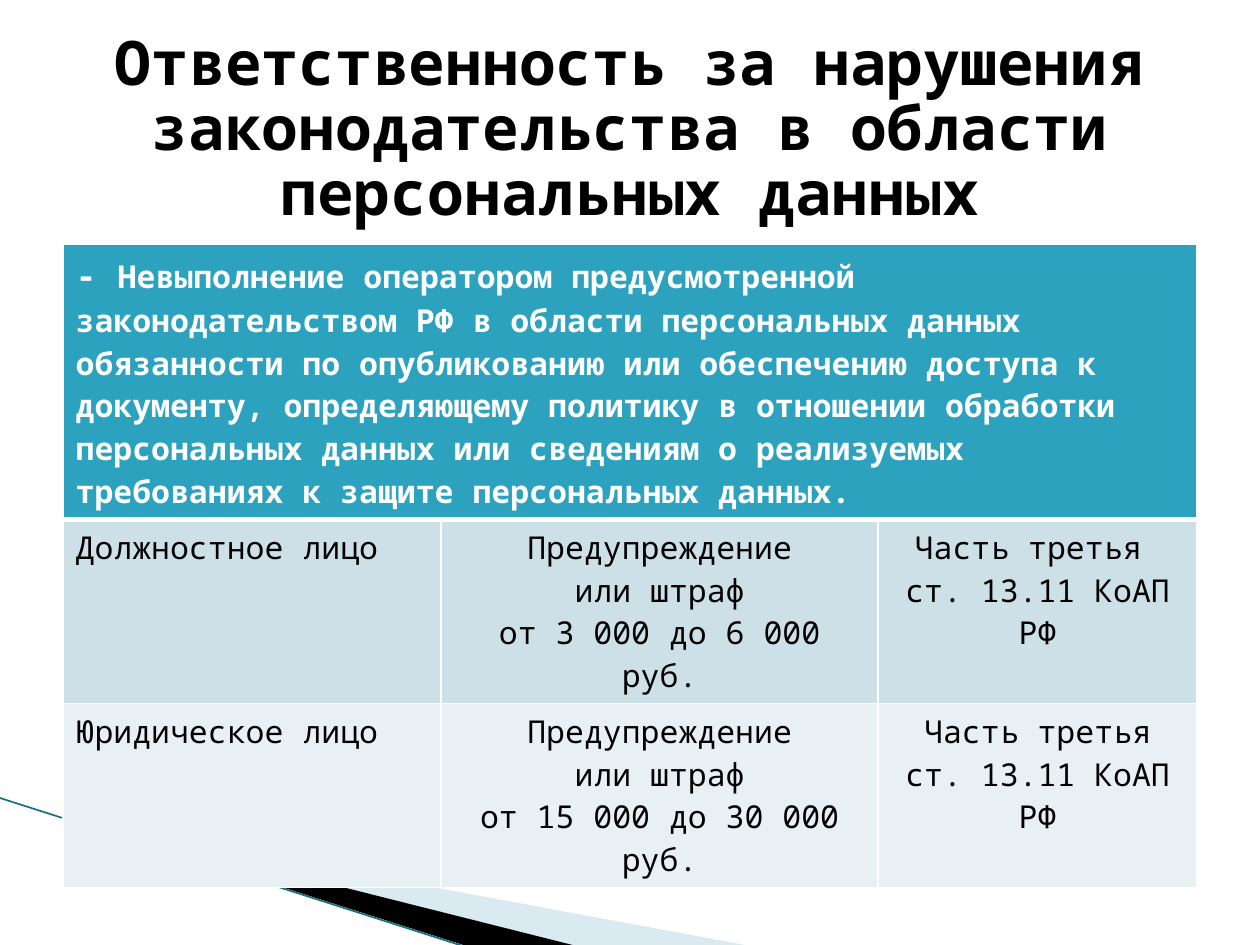
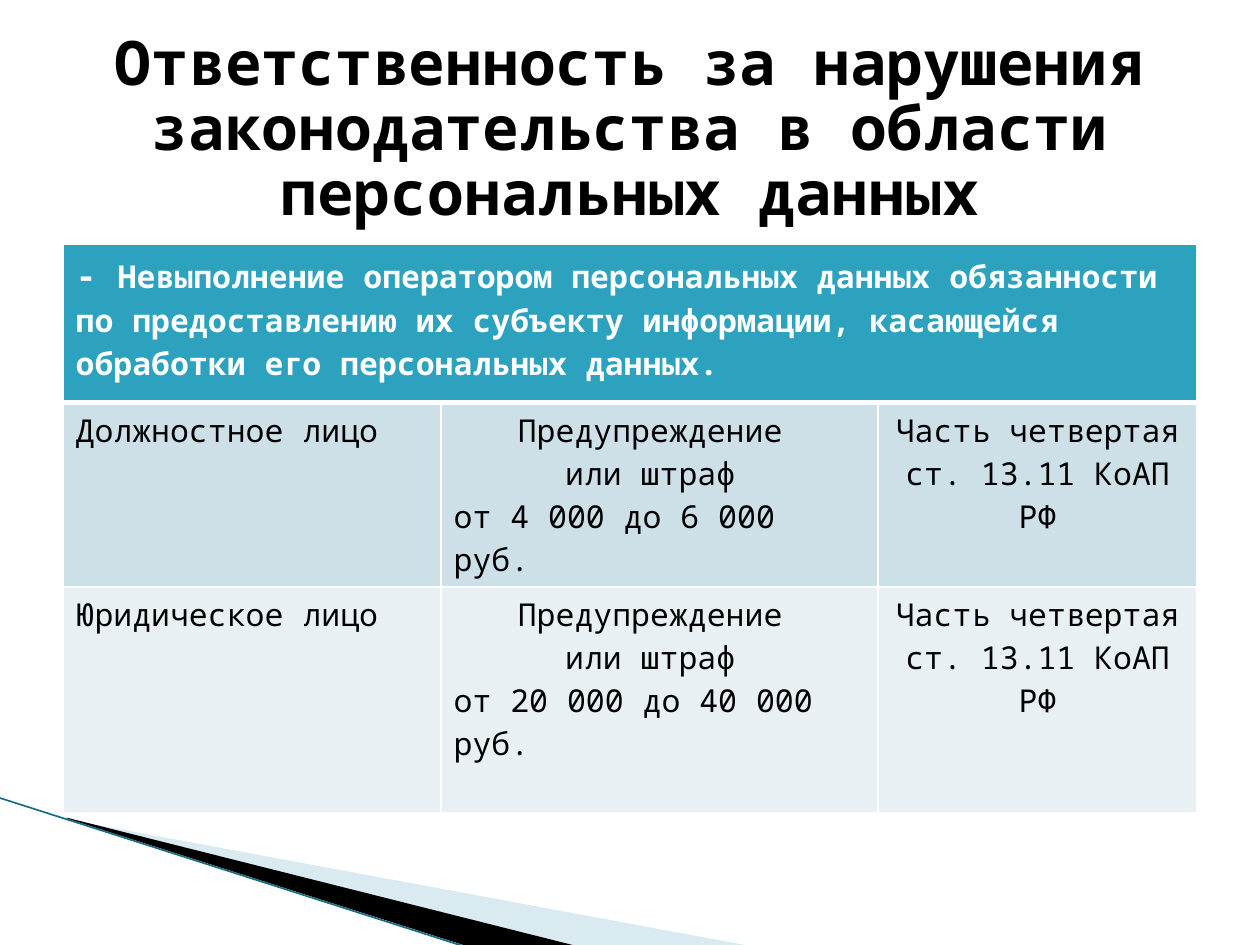
import dataclasses
import typing

import lxml.etree
import pptx
import pptx.dml.color
import pptx.enum.shapes
import pptx.enum.text
import pptx.oxml.ns
import pptx.util

Pt = pptx.util.Pt
RGBColor = pptx.dml.color.RGBColor
ALIGN = pptx.enum.text.PP_ALIGN
qn = pptx.oxml.ns.qn

FONT = "Noto Sans Mono"
BLACK = RGBColor(0x00, 0x00, 0x00)
WHITE = RGBColor(0xFF, 0xFF, 0xFF)
HEADER_BLUE = RGBColor(0x2D, 0xA2, 0xBF)
ROW_FILLS = (RGBColor(0xCD, 0xE0, 0xE8), RGBColor(0xE8, 0xF0, 0xF4))
PALE_BLUE = RGBColor(0xA0, 0xCB, 0xDC)
EDGE_TEAL = RGBColor(0x1A, 0x6E, 0x82)

TITLE = "Ответственность за нарушения законодательства в области персональных данных"
PERSONS = ("Должностное лицо", "Юридическое лицо")
ARTICLE = "ст. 13.11 КоАП РФ"
LEFT, WIDTH = 36, 648
TABLE_TOP = 139.7
COLUMN_WIDTHS = (216, 249.84, 182.16)
THIN, THICK = 1, 3


@dataclasses.dataclass(frozen=True)
class Wedge:
    points: tuple[tuple[float, float], ...]
    color: RGBColor
    opacity: int


@dataclasses.dataclass(frozen=True)
class Violation:
    description: str
    warning: tuple[str, str]
    fines: tuple[str, str]
    clauses: tuple[str, str]
    fine_align: typing.Any
    row_heights: tuple[float, float, float]


WEDGES = (
    Wedge(((39.6, 468.5), (428.4, 540.5), (328.3, 540.5), (39.6, 468)), PALE_BLUE, 40),
    Wedge(((38.2, 467.3), (329, 540.5), (267.8, 541), (38.9, 468)), BLACK, 100),
)

VIOLATIONS = (
    Violation(
        "Невыполнение оператором предусмотренной законодательством РФ в области "
        "персональных данных обязанности по опубликованию или обеспечению доступа к "
        "документу, определяющему политику в отношении обработки персональных данных "
        "или сведениям о реализуемых требованиях к защите персональных данных.",
        ("Предупреждение", " или штраф "),
        ("от 3 000 до 6 000 руб.", "от 15 000 до 30 000 руб."),
        ("Часть третья ", "Часть третья"),
        ALIGN.CENTER,
        (156, 105, 105),
    ),
    Violation(
        "Невыполнение оператором персональных данных обязанности по предоставлению "
        "их субъекту информации, касающейся обработки его персональных данных.",
        ("Предупреждение ", "или штраф "),
        ("от 4 000 до 6 000 руб.", "от 20 000 до 40 000 руб."),
        ("Часть четвертая", "Часть четвертая"),
        ALIGN.LEFT,
        (90.5, 105, 129),
    ),
)


def style_font(font, size: float, color: RGBColor, bold: bool) -> None:
    font.name = FONT
    font.size = Pt(size)
    font.bold = bold
    font.color.rgb = color


def add_title(slide) -> None:
    title = slide.shapes.title
    title.left, title.top, title.width, title.height = Pt(LEFT), Pt(21.6), Pt(WIDTH), Pt(106.56)
    frame = title.text_frame
    frame.text = TITLE
    frame.word_wrap = True
    frame.auto_size = pptx.enum.text.MSO_AUTO_SIZE.NONE
    frame.vertical_anchor = pptx.enum.text.MSO_ANCHOR.MIDDLE
    paragraph = frame.paragraphs[0]
    paragraph.alignment = ALIGN.CENTER
    paragraph.line_spacing = 0.88
    style_font(paragraph.runs[0].font, 35, BLACK, True)


def add_wedge(slide, wedge: Wedge) -> None:
    corners = [(Pt(x), Pt(y)) for x, y in wedge.points]
    builder = slide.shapes.build_freeform(*corners[0], scale=1.0)
    builder.add_line_segments(corners[1:], close=True)
    shape = builder.convert_to_shape()
    shape.shadow.inherit = False
    shape.line.fill.background()
    shape.fill.solid()
    shape.fill.fore_color.rgb = wedge.color
    if wedge.opacity < 100:
        color = shape._element.spPr.find(qn("a:solidFill"))[0]
        lxml.etree.SubElement(color, qn("a:alpha"), val=str(wedge.opacity * 1000))


def add_corner_decor(slide) -> None:
    for wedge in WEDGES:
        add_wedge(slide, wedge)
    edge = slide.shapes.add_connector(
        pptx.enum.shapes.MSO_CONNECTOR.STRAIGHT, Pt(-0.7), Pt(455.8), Pt(267.1), Pt(541.4)
    )
    edge.line.color.rgb = EDGE_TEAL
    edge.line.width = Pt(0.95)
    lxml.etree.SubElement(edge._element.spPr, qn("a:effectLst"))


def style_cell(cell, fill: RGBColor, top: float, bottom: float) -> None:
    cell.fill.solid()
    cell.fill.fore_color.rgb = fill
    properties = cell._tc.get_or_add_tcPr()
    borders = {"a:lnL": THIN, "a:lnR": THIN, "a:lnT": top, "a:lnB": bottom}
    for position, (tag, width) in enumerate(borders.items()):
        border = lxml.etree.Element(qn(tag), w=str(Pt(width)))
        paint = lxml.etree.SubElement(border, qn("a:solidFill"))
        lxml.etree.SubElement(paint, qn("a:srgbClr"), val=str(WHITE))
        properties.insert(position, border)


def write_cell(cell, lines: typing.Sequence[str], aligns: typing.Sequence) -> None:
    cell.text_frame.text = "\n".join(lines)
    for paragraph, align in zip(cell.text_frame.paragraphs, aligns):
        paragraph.alignment = align
        style_font(paragraph.runs[0].font, 18, BLACK, False)


def write_header(cell, description: str) -> None:
    paragraph = cell.text_frame.paragraphs[0]
    for text, size in (("- ", 20), (description, 18)):
        run = paragraph.add_run()
        run.text = text
        style_font(run.font, size, WHITE, True)


def add_penalty_table(slide, violation: Violation) -> None:
    table = slide.shapes.add_table(
        3, 3, Pt(LEFT), Pt(TABLE_TOP), Pt(WIDTH), Pt(sum(violation.row_heights))
    ).table
    for column, width in zip(table.columns, COLUMN_WIDTHS):
        column.width = Pt(width)
    for row, height in zip(table.rows, violation.row_heights):
        row.height = Pt(height)
    for index, fill in enumerate((HEADER_BLUE, *ROW_FILLS)):
        for cell in table.rows[index].cells:
            style_cell(cell, fill, THICK if index == 1 else THIN, THICK if index == 0 else THIN)
    table.cell(0, 0).merge(table.cell(0, 2))
    write_header(table.cell(0, 0), violation.description)
    penalties = zip(PERSONS, violation.fines, violation.clauses)
    for index, (person, fine, clause) in enumerate(penalties, start=1):
        write_cell(table.cell(index, 0), [person], [ALIGN.LEFT])
        write_cell(
            table.cell(index, 1),
            [*violation.warning, fine],
            [ALIGN.CENTER, ALIGN.CENTER, violation.fine_align],
        )
        write_cell(table.cell(index, 2), [clause, ARTICLE], [ALIGN.CENTER] * 2)


def main() -> None:
    presentation = pptx.Presentation()
    presentation.slide_width, presentation.slide_height = Pt(720), Pt(540)
    for violation in VIOLATIONS:
        slide = presentation.slides.add_slide(presentation.slide_layouts[5])
        add_corner_decor(slide)
        add_penalty_table(slide, violation)
        add_title(slide)
    presentation.save("out.pptx")


if __name__ == "__main__":
    main()
